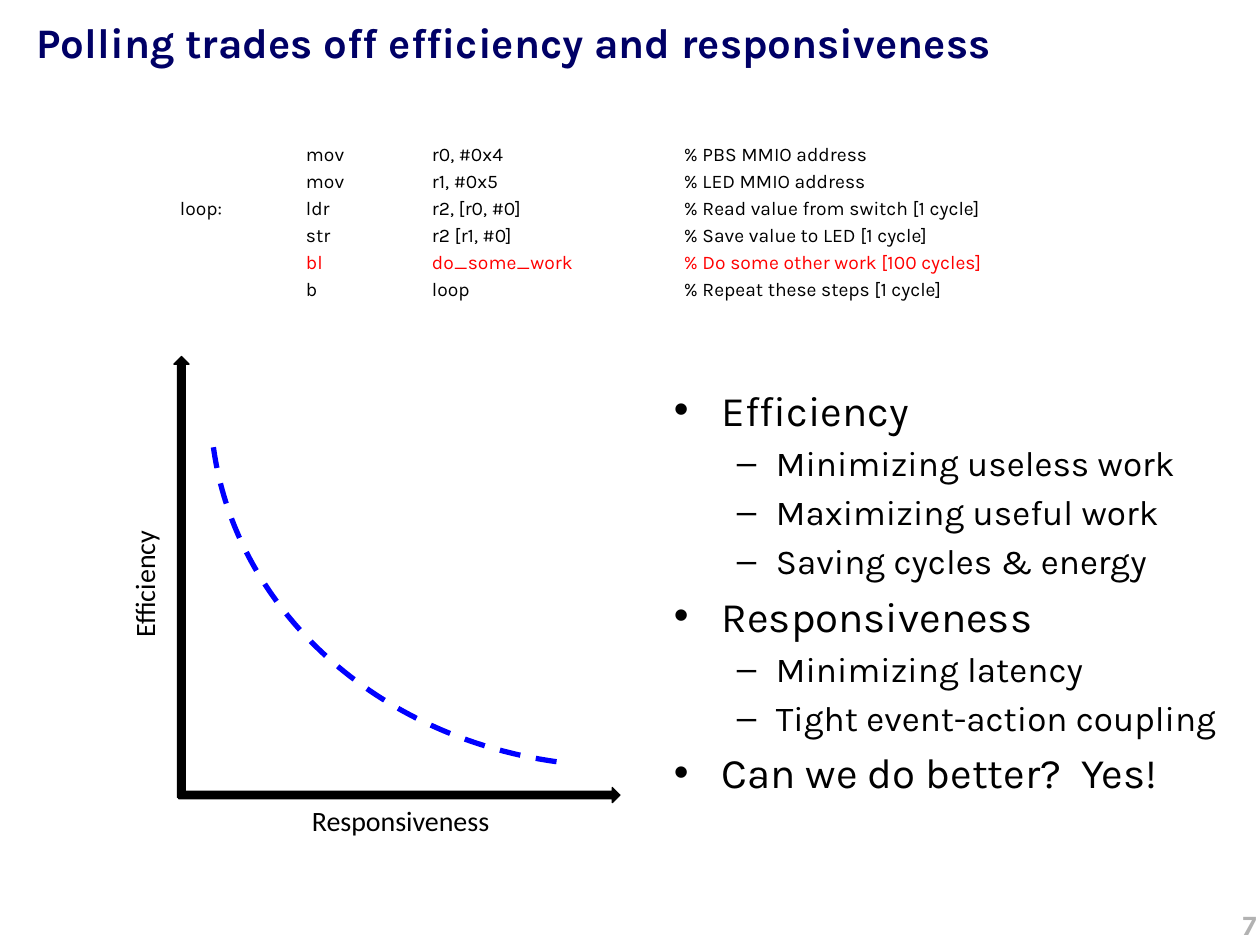
import lxml.etree
import pptx
import pptx.dml.color
import pptx.enum.dml
import pptx.enum.shapes
import pptx.enum.text
import pptx.oxml.ns
import pptx.util

PX = 9144
COLORS = {"title": "000066", "text": "000000", "work": "FF0000",
          "curve": "0000FF", "number": "B2B2B2"}
ALIGN = pptx.enum.text.PP_ALIGN
SHAPE = pptx.enum.shapes.MSO_SHAPE

CODE = [
    ("\tmov\tr0, #0x4 \t\t% PBS MMIO address", "text"),
    ("\tmov\tr1, #0x5 \t\t% LED MMIO address", "text"),
    ("loop:\tldr\tr2, [r0, #0]\t\t% Read value from switch [1 cycle]", "text"),
    ("\tstr\tr2 [r1, #0]\t\t% Save value to LED [1 cycle]", "text"),
    ("\tbl\tdo_some_work\t% Do some other work [100 cycles]", "work"),
    ("\tb\tloop\t\t% Repeat these steps [1 cycle]", "text"),
]
POINTS = [
    (0, "Efficiency"),
    (1, "Minimizing useless work"),
    (1, "Maximizing useful work"),
    (1, "Saving cycles & energy"),
    (0, "Responsiveness"),
    (1, "Minimizing latency"),
    (1, "Tight event-action coupling"),
    (0, "Can we do better?  Yes!"),
]
LEVELS = [
    {"size": 24, "margin": 38, "hang": 38, "mark": "•"},
    {"size": 20, "margin": 81, "hang": 31, "mark": "–"},
]


def emu(*lengths):
    return [round(length * PX) for length in lengths]


def rgb(name):
    return pptx.dml.color.RGBColor.from_string(COLORS[name])


def add_element(parent, tag, **attributes):
    element = lxml.etree.SubElement(parent, pptx.oxml.ns.qn(tag))
    for key, value in attributes.items():
        element.set(key, str(value))
    return element


def write(para, text, size, color="text", **style):
    span = para.add_run()
    span.text = text
    span.font.color.rgb = rgb(color)
    values = {"name": "Karla", "size": pptx.util.Pt(size), **style}
    for key, value in values.items():
        setattr(span.font, key, value)


def add_box(page, box, **frame_format):
    shape = page.shapes.add_textbox(*emu(*box))
    for key, value in {"word_wrap": True, **frame_format}.items():
        setattr(shape.text_frame, key, value)
    return shape


def next_para(frame, index, size):
    if index == 0:
        return frame.paragraphs[0]
    para = frame.add_paragraph()
    para.space_before = pptx.util.Pt(round(size * 0.2, 1))
    return para


def add_title(page, box):
    title = page.shapes.title
    title.left, title.top, title.width, title.height = emu(*box)
    title.text_frame.vertical_anchor = pptx.enum.text.MSO_ANCHOR.TOP
    para = title.text_frame.paragraphs[0]
    para.alignment = ALIGN.LEFT
    write(para, "Polling trades off efficiency and responsiveness", 24, "title", bold=True)


def add_page_number(page, box):
    para = add_box(page, box).text_frame.paragraphs[0]
    para.alignment = ALIGN.RIGHT
    write(para, "7", 16, "number", bold=True)


def add_code(page, box):
    frame = add_box(page, box).text_frame
    for index, (text, color) in enumerate(CODE):
        para = next_para(frame, index, 11)
        stops = add_element(para._p.get_or_add_pPr(), "a:tabLst")
        for column in range(1, 5):
            add_element(stops, "a:tab", pos=column * 100 * PX, algn="l")
        write(para, text, 11, color)


def add_points(page, box):
    frame = add_box(page, box).text_frame
    for index, (level, text) in enumerate(POINTS):
        style = LEVELS[level]
        para = next_para(frame, index, style["size"])
        para.level = level
        properties = para._p.get_or_add_pPr()
        properties.set("marL", str(style["margin"] * PX))
        properties.set("indent", str(-style["hang"] * PX))
        add_element(properties, "a:buFont", typeface="Arial")
        add_element(properties, "a:buChar", char=style["mark"])
        write(para, text, style["size"])


def add_axis(page, box, rotation):
    arrow = page.shapes.add_shape(SHAPE.RIGHT_ARROW, *emu(*box))
    arrow.rotation = rotation
    arrow.shadow.inherit = False
    arrow.fill.solid()
    arrow.fill.fore_color.rgb = rgb("text")
    arrow.line.color.rgb = rgb("text")
    arrow.line.width = pptx.util.Pt(0.75)


def add_axis_label(page, box, text, rotation):
    label = add_box(page, box, word_wrap=False,
                    auto_size=pptx.enum.text.MSO_AUTO_SIZE.SHAPE_TO_FIT_TEXT)
    label.rotation = rotation
    para = label.text_frame.paragraphs[0]
    para.alignment = ALIGN.CENTER
    write(para, text, 16, name="Calibri")


def add_curve(page, box):
    curve = page.shapes.add_shape(SHAPE.ARC, *emu(*box))
    curve.adjustments[0] = 168.03
    curve.adjustments[1] = 212.82
    curve.rotation = 180
    curve.shadow.inherit = False
    curve.fill.background()
    curve.line.color.rgb = rgb("curve")
    curve.line.width = pptx.util.Pt(3)
    curve.line.dash_style = pptx.enum.dml.MSO_LINE.DASH


def add_tradeoff(page, box):
    left, top, width, height = box
    thick = 12
    bottom = top + height
    center = left + 2
    add_axis(page, (left, bottom - 8, width, thick), 0)
    add_axis(page, (center - height // 2, top + height // 2 - thick // 2,
                    height, thick), 270)
    add_axis_label(page, (left - 81, top + 162, 107, 37), "Efficiency", 270)
    add_axis_label(page, (left + 94, bottom, 164, 37), "Responsiveness", 0)
    add_curve(page, (left + 25, top - 250, 650, 575))


def main():
    deck = pptx.Presentation()
    deck.slide_width, deck.slide_height = emu(1000, 750)
    page = deck.slides.add_slide(deck.slide_layouts[5])
    add_title(page, (19, 8, 971, 100))
    add_page_number(page, (690, 715, 317, 50))
    add_code(page, (133, 108, 683, 167))
    add_tradeoff(page, (142, 283, 350, 350))
    add_points(page, (525, 300, 467, 375))
    deck.save("out.pptx")


if __name__ == "__main__":
    main()
